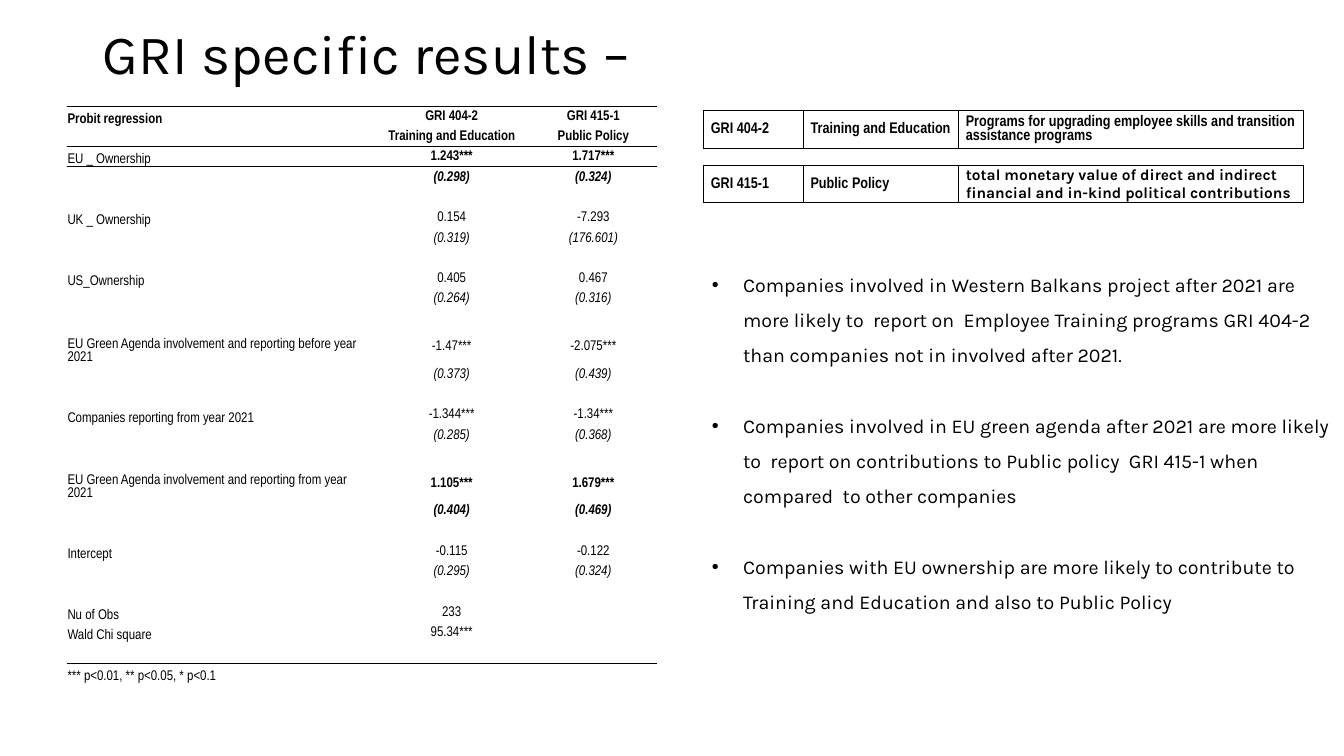
from dataclasses import dataclass

from lxml import etree
from pptx import Presentation
from pptx import util as u
from pptx.dml.color import RGBColor
from pptx.enum import text
from pptx.oxml.ns import qn

INK = "000000"
NARROW = "Arial Narrow"
KARLA = "Karla"
PLAIN_STYLE = "{2D5ABB26-0587-4C30-8999-92F81FD0307C}"
LEFT, MID = text.PP_ALIGN.LEFT, text.PP_ALIGN.CENTER


@dataclass
class Effect:
    name: str
    coefs: tuple[str, str]
    errors: tuple[str, str]
    bold: bool = False


@dataclass
class Line:
    cells: tuple[str, str, str]
    bold: bool = False
    italic: bool = False


@dataclass
class Topic:
    top: float
    cells: tuple[str, str, str]
    font: str


EFFECTS = [
    Effect("EU _ Ownership", ("1.243***", "1.717***"), ("(0.298)", "(0.324)"), True),
    Effect("UK _ Ownership", ("0.154", "-7.293"), ("(0.319)", "(176.601)")),
    Effect("US_Ownership", ("0.405", "0.467"), ("(0.264)", "(0.316)")),
    Effect("EU Green Agenda involvement and reporting before year 2021",
           ("-1.47***", "-2.075***"), ("(0.373)", "(0.439)")),
    Effect("Companies reporting from year 2021",
           ("-1.344***", "-1.34***"), ("(0.285)", "(0.368)")),
    Effect("EU Green Agenda involvement and reporting from year 2021",
           ("1.105***", "1.679***"), ("(0.404)", "(0.469)"), True),
    Effect("Intercept", ("-0.115", "-0.122"), ("(0.295)", "(0.324)")),
]

TOPICS = [
    Topic(1.1, ("GRI 404-2", "Training and Education",
                "Programs for upgrading employee skills and transition assistance programs"), NARROW),
    Topic(1.64, ("GRI 415-1", "Public Policy",
                 "total monetary value of direct and indirect financial and in-kind political contributions"), KARLA),
]

POINTS = [
    "Companies involved in Western Balkans project after 2021 are more likely to  report on  "
    "Employee Training programs GRI 404-2 than companies not in involved after 2021.",
    "Companies involved in EU green agenda after 2021 are more likely to  report on contributions "
    "to Public policy  GRI 415-1 when compared  to other companies",
    "Companies with EU ownership are more likely to contribute to Training and Education "
    "and also to Public Policy",
]


def paint(target, color: str) -> None:
    target.rgb = RGBColor.from_string(color)


def style(para, name: str, size: float, bold: bool = False, italic: bool = False) -> None:
    font = para.font
    font.name, font.size, font.bold, font.italic = name, u.Pt(size), bold, italic
    paint(font.color, INK)


def place(shape, left: float, top: float, width: float, height: float) -> None:
    shape.left, shape.top = u.Inches(left), u.Inches(top)
    shape.width, shape.height = u.Inches(width), u.Inches(height)


def rule(cell, sides: str, width: float) -> None:
    props = cell._tc.get_or_add_tcPr()
    for side in sides:
        line = etree.SubElement(props, qn(f"a:ln{side}"), w=str(u.Pt(width)))
        fill = etree.SubElement(line, qn("a:solidFill"))
        etree.SubElement(fill, qn("a:srgbClr"), val=INK)


def grid(slide, rows: int, left: float, top: float, widths: tuple[float, ...], height: float):
    frame = slide.shapes.add_table(rows, len(widths), u.Inches(left), u.Inches(top),
                                   u.Inches(sum(widths)), u.Inches(height))
    table = frame.table
    table.first_row = table.horz_banding = False
    for mark in frame._element.iter(qn("a:tableStyleId")):
        mark.text = PLAIN_STYLE
    for col, width in zip(table.columns, widths):
        col.width = u.Inches(width)
    return table


def write(cell, words: str, name: str, size: float, pad: tuple[float, float],
          bold: bool = False, italic: bool = False, align=LEFT,
          anchor=text.MSO_ANCHOR.MIDDLE) -> None:
    cell.fill.background()
    cell.margin_left = cell.margin_right = u.Inches(pad[0])
    cell.margin_top, cell.margin_bottom = u.Inches(pad[1]), 0
    cell.vertical_anchor = anchor
    para = cell.text_frame.paragraphs[0]
    para.alignment = align
    if words:
        para.text = words
    else:
        etree.SubElement(para._p, qn("a:endParaRPr"), sz=str(size * 100))
    style(para, name, size, bold, italic)


def list_lines() -> list[Line]:
    lines = [Line(("Probit regression", "GRI 404-2", "GRI 415-1"), True),
             Line(("", "Training and Education", "Public Policy"), True)]
    for item in EFFECTS:
        lines += [Line((item.name, *item.coefs), item.bold),
                  Line(("", *item.errors), item.bold, True),
                  Line(("", "", ""))]
    return lines + [Line(("Nu of Obs", "233", "")),
                    Line(("Wald Chi square", "95.34***", "")),
                    Line(("", "", "")),
                    Line(("*** p<0.01, ** p<0.05, * p<0.1", "", ""))]


def draw_model(slide) -> None:
    lines = list_lines()
    ruled = (0, 2, len(lines) - 1)
    table = grid(slide, len(lines), 0.66, 1.05, (3.05, 1.54, 1.27), 5.45)
    for row, line in enumerate(lines):
        sides = "T" * (row in ruled) + "B" * (row + 1 in ruled)
        for col, words in enumerate(line.cells):
            cell = table.cell(row, col)
            rule(cell, sides, 0.5)
            label = col == 0
            write(cell, words, NARROW, 10, (0.01, 0.01),
                  line.bold and (not label or row == 0), line.italic,
                  LEFT if label else MID,
                  text.MSO_ANCHOR.BOTTOM if label else text.MSO_ANCHOR.MIDDLE)


def draw_topic(slide, topic: Topic) -> None:
    table = grid(slide, 1, 6.98, topic.top, (0.99, 1.54, 3.42), 0.37)
    for col, (words, name) in enumerate(zip(topic.cells, (NARROW, NARROW, topic.font))):
        cell = table.cell(0, col)
        rule(cell, "LRTB", 1)
        write(cell, words, name, 11, (0.07, 0), True)


def draw_title(shape) -> None:
    place(shape, 0.92, 0.4, 11.5, 0.32)
    frame = shape.text_frame
    frame.auto_size = text.MSO_AUTO_SIZE.NONE
    frame.vertical_anchor = text.MSO_ANCHOR.MIDDLE
    para = frame.paragraphs[0]
    para.text = "GRI specific results –"
    para.alignment, para.line_spacing = LEFT, 0.9
    style(para, KARLA, 39.6)


def draw_points(shape) -> None:
    place(shape, 6.96, 2.54, 6.38, 3.6)
    frame = shape.text_frame
    frame.word_wrap = True
    frame.auto_size = text.MSO_AUTO_SIZE.SHAPE_TO_FIT_TEXT
    frame.vertical_anchor = text.MSO_ANCHOR.TOP
    for rank, words in enumerate(POINTS):
        para = frame.add_paragraph() if rank else frame.paragraphs[0]
        para.text = words
        para.line_spacing = 1.5
        para.space_before = u.Pt(25 if rank else 0)
        props = para._p.get_or_add_pPr()
        props.set("marL", str(u.Inches(0.31)))
        props.set("indent", str(u.Inches(-0.31)))
        etree.SubElement(props, qn("a:buFont"), typeface="Arial")
        etree.SubElement(props, qn("a:buChar"), char="•")
        style(para, KARLA, 14)


def main() -> None:
    deck = Presentation()
    deck.slide_width, deck.slide_height = u.Inches(13.33), u.Inches(7.5)
    slide = deck.slides.add_slide(deck.slide_layouts[1])
    draw_title(slide.shapes.title)
    draw_points(slide.placeholders[1])
    draw_model(slide)
    for topic in TOPICS:
        draw_topic(slide, topic)
    deck.save("out.pptx")


if __name__ == "__main__":
    main()
